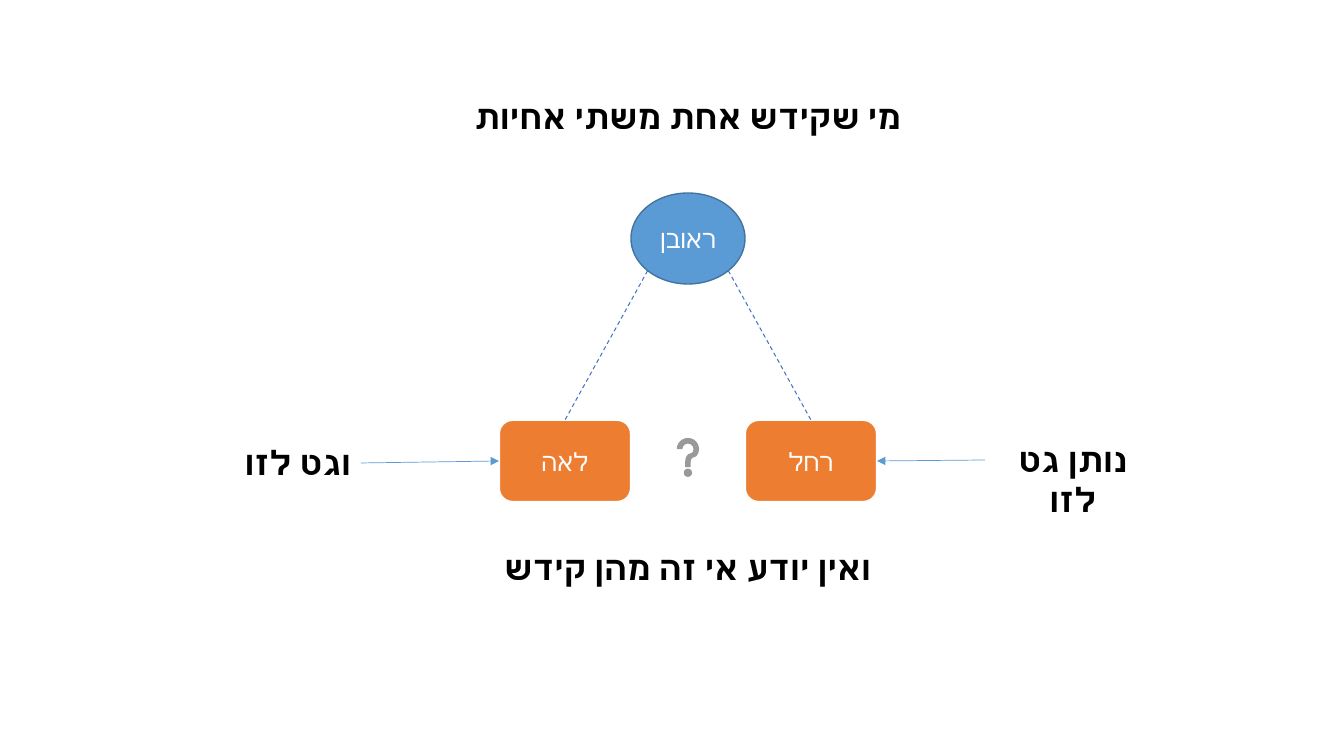
from math import sqrt
from lxml.etree import SubElement
from pptx import Presentation
from pptx.dml.color import RGBColor
from pptx.enum.dml import MSO_LINE
from pptx.enum.shapes import MSO_CONNECTOR, MSO_SHAPE
from pptx.enum.text import MSO_ANCHOR, MSO_AUTO_SIZE, PP_ALIGN
from pptx.oxml.ns import qn
from pptx.util import Pt

PX = 914400 / 100.8
FONT = "Lato"
WHITE = RGBColor(0xFF, 0xFF, 0xFF)
BLACK = RGBColor(0, 0, 0)
BLUE = RGBColor(0x5B, 0x9B, 0xD5)
DARK_BLUE = RGBColor(0x43, 0x73, 0x9E)
DASH_BLUE = RGBColor(0x44, 0x72, 0xC4)
ORANGE = RGBColor(0xED, 0x7D, 0x31)

# Content: text and box (left, top, width, height) in px
TITLE = ("מי שקידש אחת משתי אחיות", (445, 91, 486, 50))
MAN = ("ראובן", (631, 193, 114, 91))
SISTERS = [("רחל", 745), ("לאה", 499)]
SISTER_TOP, SISTER_W, SISTER_H = 420, 132, 82
QUESTION = (662, 420, 52, 75)
CAPTIONS = [
    ("ואין יודע אי זה מהן קידש", (472, 542, 432, 50), PP_ALIGN.CENTER),
    ("נותן גט לזו", (985, 434, 176, 50), PP_ALIGN.CENTER),
    ("וגט לזו", (203, 437, 158, 50), PP_ALIGN.RIGHT),
]
ARROWS = [((985, 460), (877, 461)), ((361, 463), (499, 461))]


def emu(*lengths):
    return [round(v * PX) for v in lengths]


def write(sp, text, size, color, bold=False, align=PP_ALIGN.CENTER):
    tf = sp.text_frame
    tf.word_wrap = True
    tf.text = text
    p = tf.paragraphs[0]
    p.alignment = align
    p.font.size, p.font.bold, p.font.name = Pt(size), bold, FONT
    p.font.color.rgb = color
    # Right-to-left direction and the Hebrew typeface
    pPr = p._p.get_or_add_pPr()
    pPr.set("rtl", "1")
    SubElement(pPr.find(qn("a:defRPr")), qn("a:cs"), typeface=FONT)
    return tf


def add_caption(sp, text, align=PP_ALIGN.CENTER):
    tf = write(sp, text, 24, BLACK, True, align)
    tf.vertical_anchor = MSO_ANCHOR.TOP
    tf.auto_size = MSO_AUTO_SIZE.SHAPE_TO_FIT_TEXT


def add_shape(kind, box, fill, line=None, width=0):
    sp = slide.shapes.add_shape(kind, *emu(*box))
    sp.shadow.inherit = False
    sp.fill.solid()
    sp.fill.fore_color.rgb = fill
    if line is None:
        sp.line.fill.background()
    else:
        sp.line.color.rgb = line
        sp.line.width = Pt(width)
    return sp


def add_line(start, end, color, width):
    cn = slide.shapes.add_connector(MSO_CONNECTOR.STRAIGHT, *emu(*start, *end))
    cn.line.color.rgb = color
    cn.line.width = Pt(width)
    SubElement(cn._element.spPr, qn("a:effectLst"))
    return cn


prs = Presentation()
prs.slide_width, prs.slide_height = emu(1344, 756)
slide = prs.slides.add_slide(prs.slide_layouts[5])

# Title
title = slide.shapes.title
title.left, title.top, title.width, title.height = emu(*TITLE[1])
add_caption(title, TITLE[0])

# Man
name, man_box = MAN
write(add_shape(MSO_SHAPE.OVAL, man_box, BLUE, DARK_BLUE, 1), name, 18, WHITE)

# Sisters, each joined to the lower diagonal of the oval
left, top, w, h = man_box
mid_x, mid_y = left + w / 2, top + h / 2
for name, x in SISTERS:
    sp = add_shape(MSO_SHAPE.ROUNDED_RECTANGLE,
                   (x, SISTER_TOP, SISTER_W, SISTER_H), ORANGE, WHITE, 1.5)
    write(sp, name, 18, WHITE)
    sister_x = x + SISTER_W / 2
    side = 1 if sister_x > mid_x else -1
    start = (mid_x + side * w / sqrt(8), mid_y + h / sqrt(8))
    cn = add_line(start, (sister_x, SISTER_TOP), DASH_BLUE, 0.75)
    cn.line.dash_style = MSO_LINE.DASH

# Question mark
add_shape(MSO_SHAPE.ACTION_BUTTON_HELP, QUESTION, WHITE)

# Captions
for text, box, align in CAPTIONS:
    add_caption(slide.shapes.add_textbox(*emu(*box)), text, align)

# Arrows to the sisters
for start, end in ARROWS:
    cn = add_line(start, end, BLUE, 0.5)
    SubElement(cn.line._get_or_add_ln(), qn("a:tailEnd"), type="triangle")

prs.save("out.pptx")
